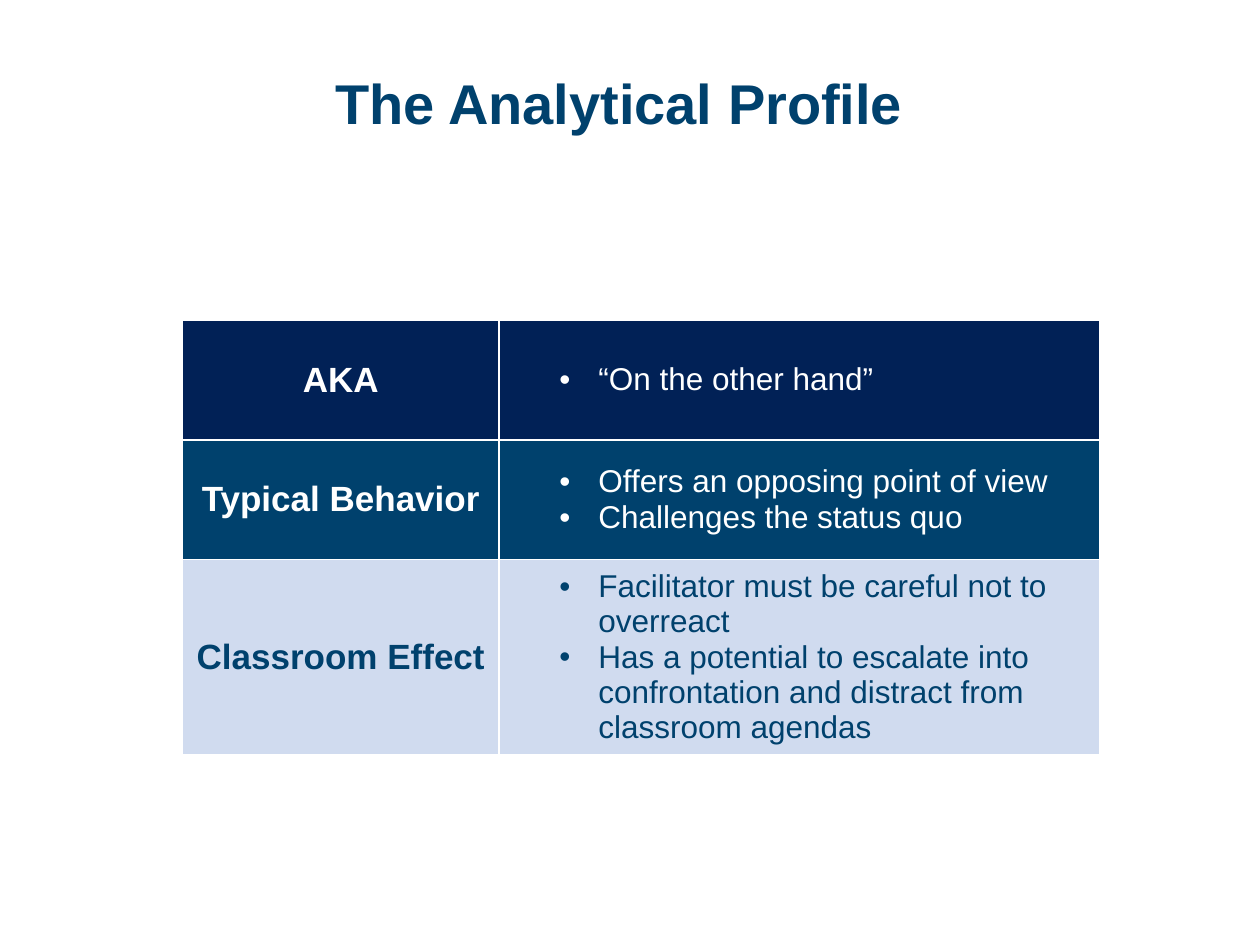
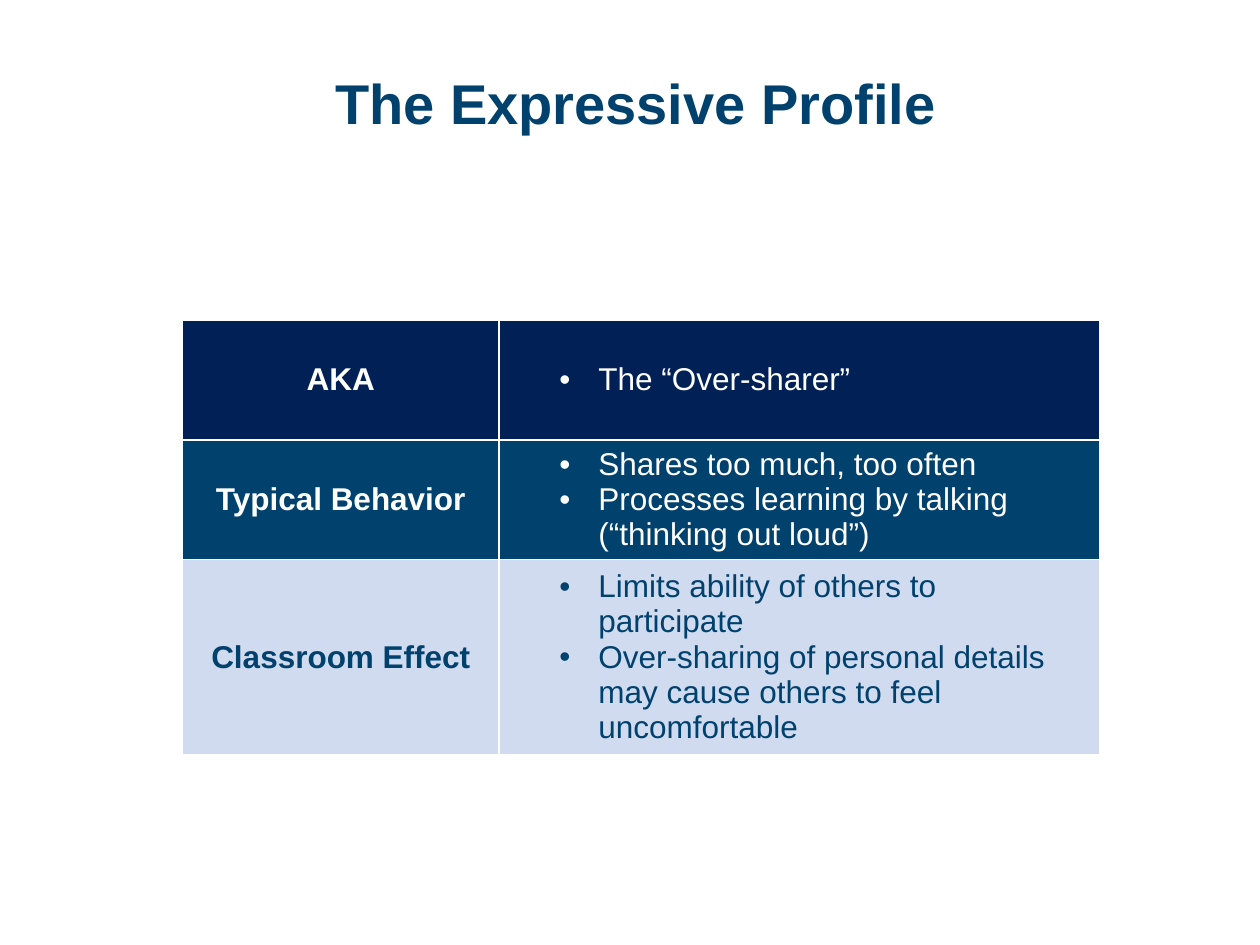
from lxml.etree import SubElement
from pptx import Presentation
from pptx.dml.color import RGBColor
from pptx.enum.text import MSO_ANCHOR as Anchor, MSO_AUTO_SIZE as AutoSize, PP_ALIGN as Align
from pptx.oxml.ns import qn
from pptx.util import Pt

FONT = "Arial"
WHITE, NAVY, BLUE, PALE = "FFFFFF", "012156", "00416D", "D0DBEF"
TITLE_BOX = (184.3, 8.6, 511.2, 104.4)
TABLE_BOX = (104.4, 182.9, 524.2, 248.4)
COLUMN_WIDTHS = (180.7, 343.5)
ROW_STYLES = (
    ("AKA", 68.4, NAVY, WHITE),
    ("Typical Behavior", 68.4, BLUE, WHITE),
    ("Classroom Effect", 111.6, PALE, BLUE),
)
PROFILES = (
    ("The Analytical Profile", 20, (
        ("“On the other hand”",),
        ("Offers an opposing point of view", "Challenges the status quo"),
        ("Facilitator must be careful not to\noverreact",
         "Has a potential to escalate into confrontation and distract from\nclassroom agendas"),
    )),
    ("The Expressive Profile", 18, (
        ("The “Over-sharer”",),
        ("Shares too much, too often",
         "Processes learning by talking\n(“thinking out loud”)"),
        ("Limits ability of others to participate",
         "Over-sharing of personal details may cause others to feel uncomfortable"),
    )),
)


def color(code):
    return RGBColor.from_string(code)


def add_text(para, text, size, code, bold=False):
    for number, line in enumerate(text.split("\n")):
        if number:
            para.add_line_break()
        span = para.add_run()
        span.text = line
        span.font.name = FONT
        span.font.size = Pt(size)
        span.font.bold = bold
        span.font.color.rgb = color(code)


def add_bullet(para):
    props = para._p.get_or_add_pPr()
    props.set("marL", str(Pt(49.7)))
    props.set("indent", str(Pt(-22.3)))
    SubElement(props, qn("a:buFont"), typeface=FONT)
    SubElement(props, qn("a:buChar"), char="•")


def style_cell(cell, fill):
    props = cell._tc.get_or_add_tcPr()
    for side in ("lnL", "lnR", "lnT", "lnB"):
        line = SubElement(props, qn(f"a:{side}"), w=str(Pt(1)))
        SubElement(SubElement(line, qn("a:solidFill")), qn("a:srgbClr"), val=WHITE)
    cell.fill.solid()
    cell.fill.fore_color.rgb = color(fill)
    cell.vertical_anchor = Anchor.MIDDLE


def place_title(page, box, text):
    title = page.shapes.title
    title.left, title.top, title.width, title.height = map(Pt, box)
    frame = title.text_frame
    frame.word_wrap = True
    frame.auto_size = AutoSize.NONE
    frame.vertical_anchor = Anchor.MIDDLE
    para = frame.paragraphs[0]
    para.alignment = Align.LEFT
    para.line_spacing = 0.9
    add_text(para, text, 32, BLUE, bold=True)


def place_profile_table(page, box, label_size, row_points):
    table = page.shapes.add_table(len(ROW_STYLES), len(COLUMN_WIDTHS), *map(Pt, box)).table
    table.first_row = table.horz_banding = False
    for column, width in zip(table.columns, COLUMN_WIDTHS):
        column.width = Pt(width)
    for row, style, points in zip(table.rows, ROW_STYLES, row_points):
        label, height, fill, ink = style
        row.height = Pt(height)
        label_cell, points_cell = row.cells
        style_cell(label_cell, fill)
        style_cell(points_cell, fill)
        para = label_cell.text_frame.paragraphs[0]
        para.alignment = Align.CENTER
        add_text(para, label, label_size, ink, bold=True)
        frame = points_cell.text_frame
        for number, point in enumerate(points):
            para = frame.add_paragraph() if number else frame.paragraphs[0]
            para.level = 1
            add_bullet(para)
            add_text(para, point, 18, ink)


def main():
    deck = Presentation()
    deck.slide_width, deck.slide_height = Pt(720), Pt(540)
    for title, label_size, row_points in PROFILES:
        page = deck.slides.add_slide(deck.slide_layouts[5])
        place_title(page, TITLE_BOX, title)
        place_profile_table(page, TABLE_BOX, label_size, row_points)
    deck.save("out.pptx")


if __name__ == "__main__":
    main()
